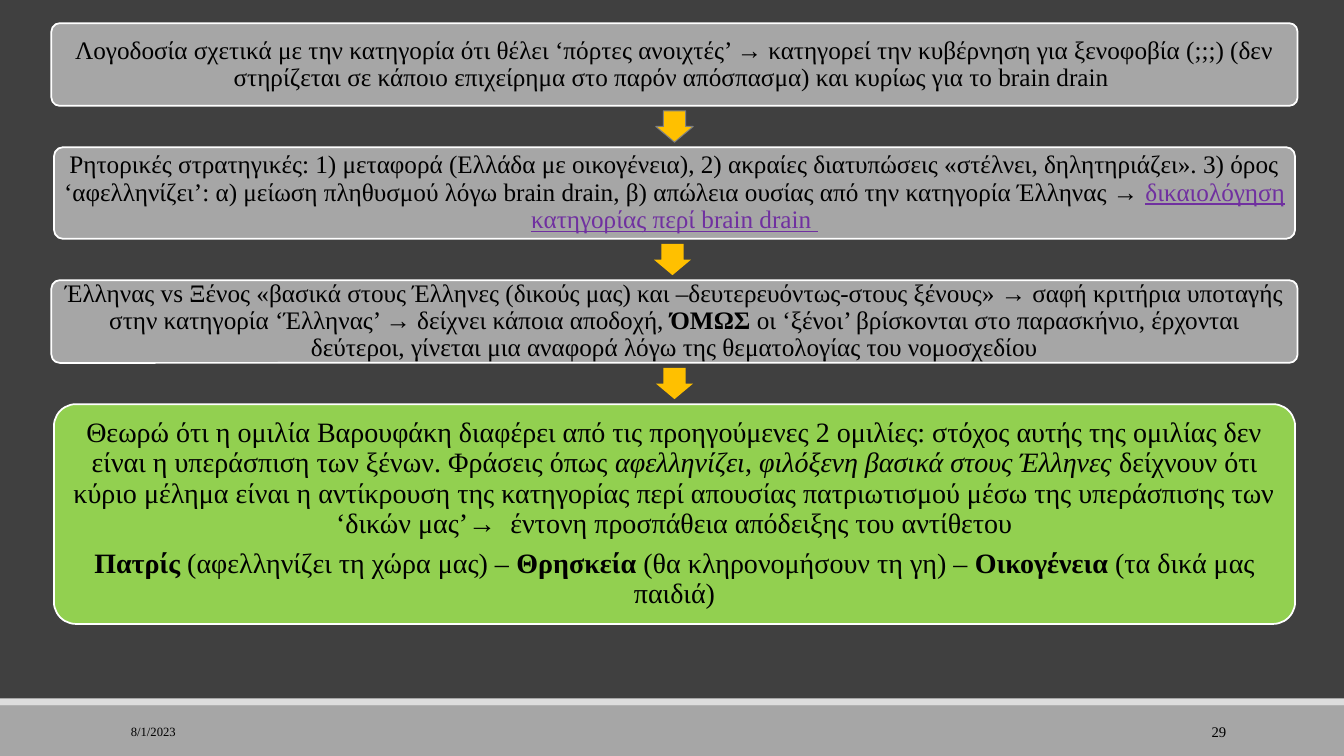
from dataclasses import dataclass

from pptx import Presentation
from pptx.dml.color import RGBColor
from pptx.enum.shapes import MSO_SHAPE as Preset
from pptx.enum.text import MSO_ANCHOR as Anchor, PP_ALIGN as Align
from pptx.shapes.autoshape import Shape
from pptx.slide import Slide
from pptx.text.text import TextFrame, _Paragraph as Paragraph
from pptx.util import Inches, Pt


@dataclass(frozen=True)
class Theme:
    font: str = "Times New Roman"
    background: str = "404040"
    grey: str = "A6A6A6"
    stripe: str = "DDDDDD"
    green: str = "92D050"
    arrow: str = "FFC000"
    arrow_outline: str = "808080"
    outline: str = "FFFFFF"
    text: str = "000000"
    accent: str = "7030A0"
    argument_size: float = 18
    conclusion_size: float = 20
    date_size: float = 9
    number_size: float = 10.5


THEME = Theme()
CENTER_X = 6.69
FIRST_TOP = 0.23
STEP_GAP = 0.41
ARROW_WIDTH, ARROW_HEIGHT = 0.37, 0.31


@dataclass(frozen=True)
class Span:
    text: str
    bold: bool = False
    italic: bool = False
    accent: bool = False


@dataclass(frozen=True)
class Step:
    width: float
    height: float
    paragraphs: list[list[Span]]
    fill: str = THEME.grey
    size: float = THEME.argument_size
    inset: float = 0.07


@dataclass(frozen=True)
class Arrow:
    center_x: float = CENTER_X
    outline: str | None = None


@dataclass(frozen=True)
class FooterField:
    text: str
    left: float
    width: float
    size: float
    align: Align


STEPS = [
    Step(12.36, 0.82, [[
        Span("Λογοδοσία σχετικά με την κατηγορία ότι θέλει ‘πόρτες ανοιχτές’ → κατηγορεί την "
             "κυβέρνηση για ξενοφοβία (;;;) (δεν στηρίζεται σε κάποιο επιχείρημα στο παρόν "
             "απόσπασμα) και κυρίως για το brain drain "),
    ]]),
    Step(12.31, 0.91, [[
        Span("Ρητορικές στρατηγικές: 1) μεταφορά (Ελλάδα με οικογένεια), 2) ακραίες διατυπώσεις "
             "«στέλνει, δηλητηριάζει». 3) όρος ‘αφελληνίζει’: α) μείωση πληθυσμού λόγω brain "
             "drain, β) απώλεια ουσίας από την κατηγορία Έλληνας → "),
        Span("δικαιολόγηση κατηγορίας περί brain drain ", accent=True),
    ]]),
    Step(12.36, 0.82, [[
        Span("Έλληνας vs Ξένος «βασικά στους Έλληνες (δικούς μας) και –δευτερευόντως-στους "
             "ξένους» → σαφή κριτήρια υποταγής στην κατηγορία ‘Έλληνας’ → δείχνει κάποια "
             "αποδοχή, "),
        Span("ΌΜΩΣ", bold=True),
        Span(" οι ‘ξένοι’ βρίσκονται στο παρασκήνιο, έρχονται δεύτεροι, γίνεται μια αναφορά "
             "λόγω της θεματολογίας του νομοσχεδίου"),
    ]]),
    Step(12.31, 2.18, [
        [
            Span("Θεωρώ ότι η ομιλία Βαρουφάκη διαφέρει από τις προηγούμενες 2 ομιλίες: στόχος "
                 "αυτής της ομιλίας δεν είναι η υπεράσπιση των ξένων. Φράσεις όπως "),
            Span("αφελληνίζει", italic=True),
            Span(", "),
            Span("φιλόξενη βασικά στους Έλληνες ", italic=True),
            Span("δείχνουν ότι κύριο μέλημα είναι η αντίκρουση της κατηγορίας περί απουσίας "
                 "πατριωτισμού μέσω της υπεράσπισης των ‘δικών μας’→  έντονη προσπάθεια "
                 "απόδειξης του αντίθετου"),
        ],
        [
            Span("Πατρίς", bold=True),
            Span(" (αφελληνίζει τη χώρα μας) – "),
            Span("Θρησκεία", bold=True),
            Span(" (θα κληρονομήσουν τη γη) – "),
            Span("Οικογένεια", bold=True),
            Span(" (τα δικά μας παιδιά)"),
        ],
    ], fill=THEME.green, size=THEME.conclusion_size, inset=0.08),
]
ARROWS = [Arrow(outline=THEME.arrow_outline), Arrow(center_x=6.67), Arrow()]
FOOTER = [
    FooterField("8/1/2023", 1.2, 2.7, THEME.date_size, Align.LEFT),
    FooterField("29", 10.83, 1.43, THEME.number_size, Align.RIGHT),
]


def rgb(color: str) -> RGBColor:
    return RGBColor.from_string(color)


def add_filled(slide: Slide, preset: Preset, left: float, top: float, width: float,
               height: float, fill: str, outline: str | None = None,
               outline_width: float = 0.75) -> Shape:
    shape = slide.shapes.add_shape(preset, Inches(left), Inches(top),
                                   Inches(width), Inches(height))
    shape.shadow.inherit = False
    shape.fill.solid()
    shape.fill.fore_color.rgb = rgb(fill)
    if outline:
        shape.line.color.rgb = rgb(outline)
        shape.line.width = Pt(outline_width)
    else:
        shape.line.fill.background()
    return shape


def format_paragraph(paragraph: Paragraph, size: float, align: Align) -> None:
    paragraph.alignment = align
    paragraph.font.name = THEME.font
    paragraph.font.size = Pt(size)
    paragraph.font.color.rgb = rgb(THEME.text)


def write_step(frame: TextFrame, step: Step) -> None:
    frame.word_wrap = True
    frame.vertical_anchor = Anchor.MIDDLE
    frame.margin_left = frame.margin_right = Inches(step.inset)
    frame.margin_top = frame.margin_bottom = Inches(step.inset)
    for index, spans in enumerate(step.paragraphs):
        paragraph = frame.add_paragraph() if index else frame.paragraphs[0]
        format_paragraph(paragraph, step.size, Align.CENTER)
        paragraph.line_spacing = 0.9
        paragraph.space_after = Pt(0.35 * step.size)
        for span in spans:
            run = paragraph.add_run()
            run.text = span.text
            run.font.color.rgb = rgb(THEME.accent if span.accent else THEME.text)
            if span.bold:
                run.font.bold = True
            if span.italic:
                run.font.italic = True
            if span.accent:
                run.font.underline = True


def add_step(slide: Slide, step: Step, top: float) -> None:
    box = add_filled(slide, Preset.ROUNDED_RECTANGLE, CENTER_X - step.width / 2, top,
                     step.width, step.height, step.fill, THEME.outline, 1.25)
    box.adjustments[0] = 0.1
    write_step(box.text_frame, step)


def add_arrow(slide: Slide, arrow: Arrow, center_y: float) -> None:
    shape = add_filled(slide, Preset.DOWN_ARROW, arrow.center_x - ARROW_WIDTH / 2,
                       center_y - ARROW_HEIGHT / 2, ARROW_WIDTH, ARROW_HEIGHT,
                       THEME.arrow, arrow.outline)
    shape.adjustments[0] = 0.6
    shape.adjustments[1] = 0.5


def add_footer_field(slide: Slide, field: FooterField) -> None:
    frame = slide.shapes.add_textbox(Inches(field.left), Inches(7.06),
                                     Inches(field.width), Inches(0.4)).text_frame
    frame.word_wrap = True
    frame.vertical_anchor = Anchor.MIDDLE
    frame.text = field.text
    format_paragraph(frame.paragraphs[0], field.size, field.align)


def main() -> None:
    deck = Presentation()
    deck.slide_width, deck.slide_height = Inches(13.33), Inches(7.5)
    slide = deck.slides.add_slide(deck.slide_layouts[6])
    slide.background.fill.solid()
    slide.background.fill.fore_color.rgb = rgb(THEME.background)
    add_filled(slide, Preset.RECTANGLE, 0, 7, 13.33, 0.5, THEME.grey)
    add_filled(slide, Preset.RECTANGLE, 0, 6.93, 13.33, 0.07, THEME.stripe)
    for field in FOOTER:
        add_footer_field(slide, field)
    top = FIRST_TOP
    for index, step in enumerate(STEPS):
        if index:
            add_arrow(slide, ARROWS[index - 1], top - STEP_GAP / 2)
        add_step(slide, step, top)
        top += step.height + STEP_GAP
    deck.save("out.pptx")


if __name__ == "__main__":
    main()
